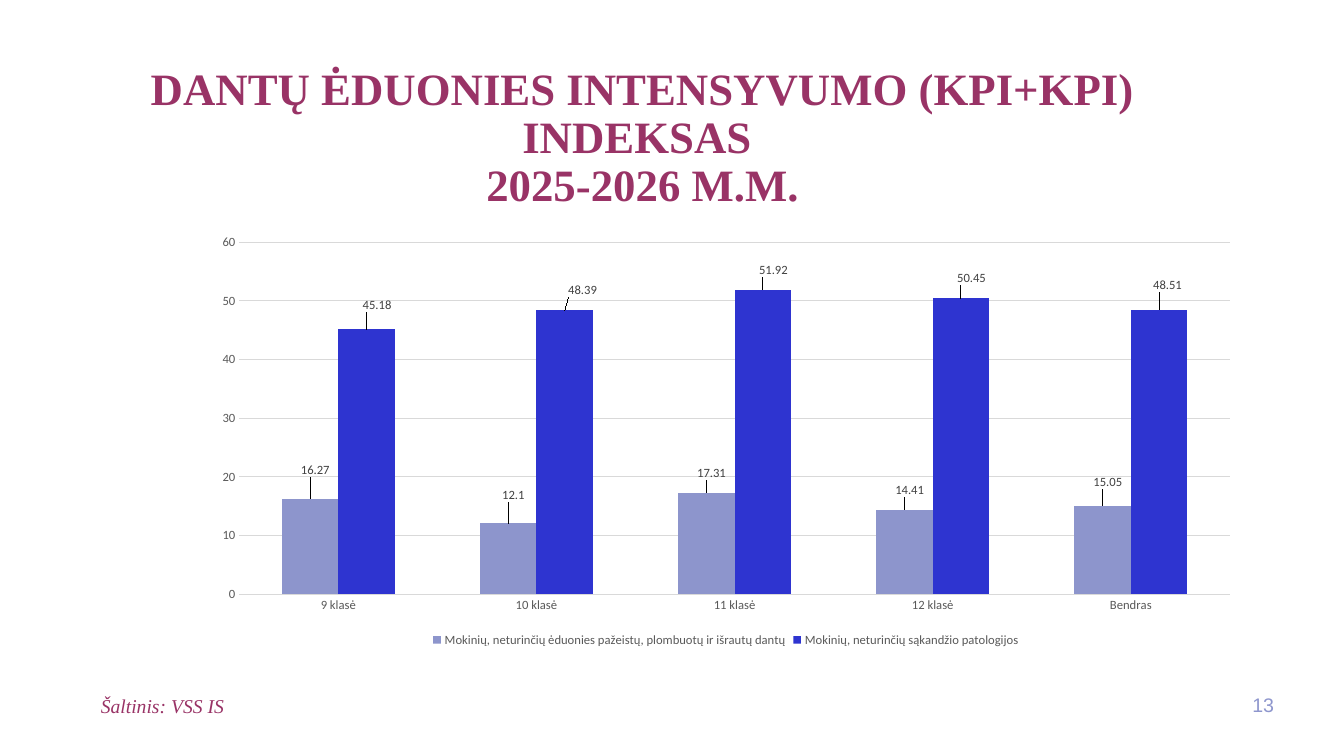
import pptx
import pptx.chart.data
import pptx.dml.color
import pptx.enum.chart
import pptx.enum.text
import pptx.oxml
import pptx.oxml.ns
import pptx.util

Cm, Pt = pptx.util.Cm, pptx.util.Pt
ALIGN = pptx.enum.text.PP_ALIGN
ANCHOR = pptx.enum.text.MSO_ANCHOR
ENUM = pptx.enum.chart

# Content
COLORS = {"plum": "993366", "lilac": "8E96CD", "pale": "8D95CC", "blue": "2E34D0",
          "grid": "D9D9D9", "axis": "595959", "label": "404040"}

SERIF = {"name": "Times New Roman"}
TEXTS = [  # text, box in cm, alignment, anchor, line spacing, font, colour
    ("DANTŲ ĖDUONIES INTENSYVUMO (KPI+KPI) INDEKSAS \v2025-2026 M.M.",
     (1.83, 1.55, 28.73, 2.34), ALIGN.CENTER, ANCHOR.TOP, 0.9,
     {**SERIF, "size": Pt(32), "bold": True}, "plum"),
    ("Šaltinis: VSS IS", (2.29, 17.37, 16, 0.97), ALIGN.LEFT, ANCHOR.TOP, 1,
     {**SERIF, "size": Pt(14), "italic": True}, "plum"),
    ("13", (31.04, 17.25, 1.32, 1.02), ALIGN.RIGHT, ANCHOR.MIDDLE, 1,
     {"name": "Arial", "size": Pt(14)}, "lilac"),
]

CLASSES = ["9 klasė", "10 klasė", "11 klasė", "12 klasė", "Bendras"]
SERIES = [  # name, colour, values, label shifts as shares of the chart
    ("Mokinių, neturinčių ėduonies pažeistų, plombuotų ir išrautų dantų", "pale",
     [16.27, 12.1, 17.31, 14.41, 15.05],
     [(0.005, -0.04), (0.005, -0.04), (0.005, -0.02), (0.005, -0.02), (0.005, -0.03)]),
    ("Mokinių, neturinčių sąkandžio patologijos", "blue",
     [45.18, 48.39, 51.92, 50.45, 48.51],
     [(0.01, -0.03), (0.017, -0.02), (0.01, -0.02), (0.01, -0.02), (0.008, -0.03)]),
]
CHART = (5.08, 5.72, 26.42, 10.69)
PLOT = {"x": 0.036, "y": 0.036, "w": 0.945, "h": 0.83}
SMALL = {"name": "Calibri", "size": Pt(9), "bold": False}


def tint(key):
    return pptx.dml.color.RGBColor.from_string(COLORS[key])


def style(font, form, key):
    for name, value in form.items():
        setattr(font, name, value)
    font.color.rgb = tint(key)


def layout(parts):
    tags = "".join(f'<c:{tag} val="{value}"/>' for tag, value in parts.items())
    return pptx.oxml.parse_xml(
        f'<c:layout {pptx.oxml.ns.nsdecls("c")}><c:manualLayout>{tags}'
        '</c:manualLayout></c:layout>')


def add_text(slide, text, box, align, anchor, space, form, key):
    frame = slide.shapes.add_textbox(*map(Cm, box)).text_frame
    frame.word_wrap = True
    frame.vertical_anchor = anchor
    para = frame.paragraphs[0]
    para.text = text
    para.alignment = align
    para.line_spacing = space
    for run in para.runs:
        style(run.font, form, key)


def add_bars(slide):
    data = pptx.chart.data.CategoryChartData()
    data.categories = CLASSES
    for name, _, values, _ in SERIES:
        data.add_series(name, values)
    chart = slide.shapes.add_chart(
        ENUM.XL_CHART_TYPE.COLUMN_CLUSTERED, *map(Cm, CHART), data).chart
    chart.has_title = False
    style(chart.font, SMALL, "axis")

    # Legend
    chart.has_legend = True
    chart.legend.position = ENUM.XL_LEGEND_POSITION.BOTTOM
    chart.legend.include_in_layout = False
    style(chart.legend.font, SMALL, "axis")

    # Axes and grid
    for axis in (chart.category_axis, chart.value_axis):
        axis.major_tick_mark = ENUM.XL_TICK_MARK.NONE
        axis.format.line.fill.background()
        style(axis.tick_labels.font, SMALL, "axis")
    rule = chart.value_axis
    rule.minimum_scale, rule.maximum_scale, rule.major_unit = 0, 60, 10
    grid = rule.major_gridlines.format.line
    grid.width = Pt(0.75)
    grid.color.rgb = tint("grid")

    # Plot area
    area = chart._chartSpace.chart.plotArea
    for old in area.findall(pptx.oxml.ns.qn("c:layout")):
        area.remove(old)
    frame = layout({"layoutTarget": "inner", "xMode": "edge", "yMode": "edge", **PLOT})
    area.insert(0, frame)

    # Bars and their labels
    plot = chart.plots[0]
    plot.gap_width, plot.overlap, plot.vary_by_categories = 150, 0, False
    for bars, (_, key, _, shifts) in zip(plot.series, SERIES):
        bars.format.fill.solid()
        bars.format.fill.fore_color.rgb = tint(key)
        bars.invert_if_negative = False
        for spot, (right, down) in enumerate(shifts):
            label = bars.points[spot].data_label
            style(label.font, SMALL, "label")
            label.position = ENUM.XL_LABEL_POSITION.OUTSIDE_END
            label._dLbl.insert(1, layout({"x": right, "y": down}))
        bars.data_labels.show_value = True
        style(bars.data_labels.font, SMALL, "label")


def main():
    deck = pptx.Presentation()
    deck.slide_width, deck.slide_height = Cm(33.87), Cm(19.05)
    slide = deck.slides.add_slide(deck.slide_layouts[6])
    for item in TEXTS:
        add_text(slide, *item)
    add_bars(slide)
    deck.save("out.pptx")


if __name__ == "__main__":
    main()
